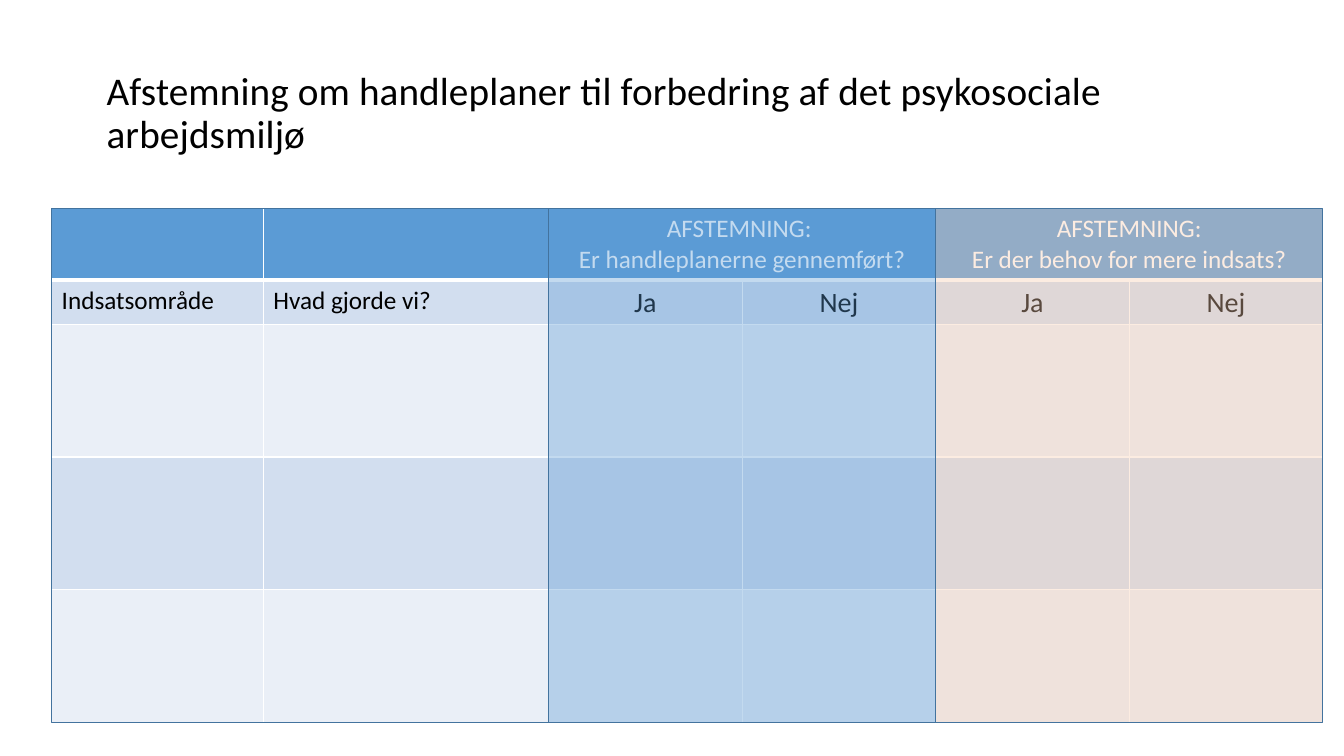
from dataclasses import dataclass
from typing import Optional

import pptx
import pptx.dml.color
import pptx.enum.shapes
import pptx.enum.text
import pptx.oxml
import pptx.oxml.ns
import pptx.util
from lxml import etree

Pt = pptx.util.Pt
ALIGN = pptx.enum.text.PP_ALIGN
ANCHOR = pptx.enum.text.MSO_ANCHOR
FONT = "Calibri"
HUES = {
    "black": "000000", "white": "FFFFFF", "blue": "5B9BD5", "peach": "F8CBAD",
    "edge": "43739E", "dark": "D2DEEF", "light": "EAEFF7",
}

LEFT, TOP, HIGH = 36.9, 149.1, 367
COLS = [151.2, 203.8] + [138.25] * 4
ROWS = [51.1, 31.6] + [94.7] * 3
BANDS = ["blue", "dark", "light", "dark", "light"]


@dataclass
class Label:
    row: int
    col: int
    lines: list[str]
    size: float = 18
    hue: str = "black"
    mid: bool = False
    span: int = 1


@dataclass
class Frame:
    first: int
    last: int
    fill: Optional[str] = None


LABELS = [
    Label(0, 2, ["AFSTEMNING: ", "Er handleplanerne gennemført?"], hue="white", mid=True, span=2),
    Label(0, 4, ["AFSTEMNING:", "Er der behov for mere indsats?"], hue="white", mid=True, span=2),
    Label(1, 0, ["Indsatsområde"]),
    Label(1, 1, ["Hvad gjorde vi?"]),
] + [Label(1, col, ["Nej" if col % 2 else "Ja"], size=20, mid=True) for col in range(2, 6)]

FRAMES = [Frame(2, 4, "blue"), Frame(4, 6, "peach"), Frame(0, 2)]


def tint(name: str) -> pptx.dml.color.RGBColor:
    return pptx.dml.color.RGBColor.from_string(HUES[name])


def write(para, text: str, size: float, hue: str):
    run = para.add_run()
    run.text = text
    run.font.name = FONT
    run.font.size = Pt(size)
    run.font.bold = False
    run.font.color.rgb = tint(hue)
    return run


def border(cell, base: float) -> None:
    props = cell._tc.get_or_add_tcPr()
    for side in "LRTB":
        width = Pt(base if side == "B" else 1)
        props.append(pptx.oxml.parse_xml(
            f'<a:ln{side} {pptx.oxml.ns.nsdecls("a")} w="{width}"><a:solidFill>'
            f'<a:srgbClr val="{HUES["white"]}"/></a:solidFill></a:ln{side}>'))


def add_title(slide) -> None:
    box = slide.shapes.add_textbox(Pt(69.1), Pt(29.5), Pt(828), Pt(104.4))
    frame = box.text_frame
    frame.word_wrap = True
    frame.vertical_anchor = ANCHOR.MIDDLE
    para = frame.paragraphs[0]
    para.line_spacing = 0.9
    run = write(para, "Afstemning om handleplaner til forbedring af det "
                "psykosociale arbejdsmiljø", 28, "black")
    run.font._element.set("spc", "10")


def add_grid(slide) -> None:
    table = slide.shapes.add_table(
        len(ROWS), len(COLS), Pt(LEFT), Pt(TOP), Pt(sum(COLS)), Pt(sum(ROWS))).table
    table.first_row = table.horz_banding = False
    for col, width in zip(table.columns, COLS):
        col.width = Pt(width)
    for row, high, band in zip(table.rows, ROWS, BANDS):
        row.height = Pt(high)
        for cell in row.cells:
            border(cell, 3 if band == "blue" else 1)
            cell.fill.solid()
            cell.fill.fore_color.rgb = tint(band)
    for label in LABELS:
        add_label(table, label)


def add_label(table, label: Label) -> None:
    cell = table.cell(label.row, label.col)
    if label.span > 1:
        cell.merge(table.cell(label.row, label.col + label.span - 1))
    if label.mid and label.row:
        cell.vertical_anchor = ANCHOR.MIDDLE
    frame = cell.text_frame
    for spot, line in enumerate(label.lines):
        para = frame.add_paragraph() if spot else frame.paragraphs[0]
        para.alignment = ALIGN.CENTER if label.mid else ALIGN.LEFT
        write(para, line, label.size, label.hue)


def add_frame(slide, frame: Frame) -> None:
    start = LEFT + sum(COLS[:frame.first])
    width = sum(COLS[frame.first:frame.last])
    rect = slide.shapes.add_shape(
        pptx.enum.shapes.MSO_SHAPE.RECTANGLE, Pt(start), Pt(TOP), Pt(width), Pt(HIGH))
    rect.shadow.inherit = False
    rect.line.color.rgb = tint("edge")
    rect.line.width = Pt(1)
    if frame.fill is None:
        rect.fill.background()
        return
    rect.fill.solid()
    rect.fill.fore_color.rgb = tint(frame.fill)
    shade = rect._element.spPr.find(pptx.oxml.ns.qn("a:solidFill"))[0]
    etree.SubElement(shade, pptx.oxml.ns.qn("a:alpha"), val="36000")


def main() -> None:
    deck = pptx.Presentation()
    deck.slide_width, deck.slide_height = Pt(960), Pt(540)
    slide = deck.slides.add_slide(deck.slide_layouts[6])
    # Heading
    add_title(slide)
    # Voting table
    add_grid(slide)
    # Tinted frames over the column groups
    for frame in FRAMES:
        add_frame(slide, frame)
    deck.save("out.pptx")


if __name__ == "__main__":
    main()
